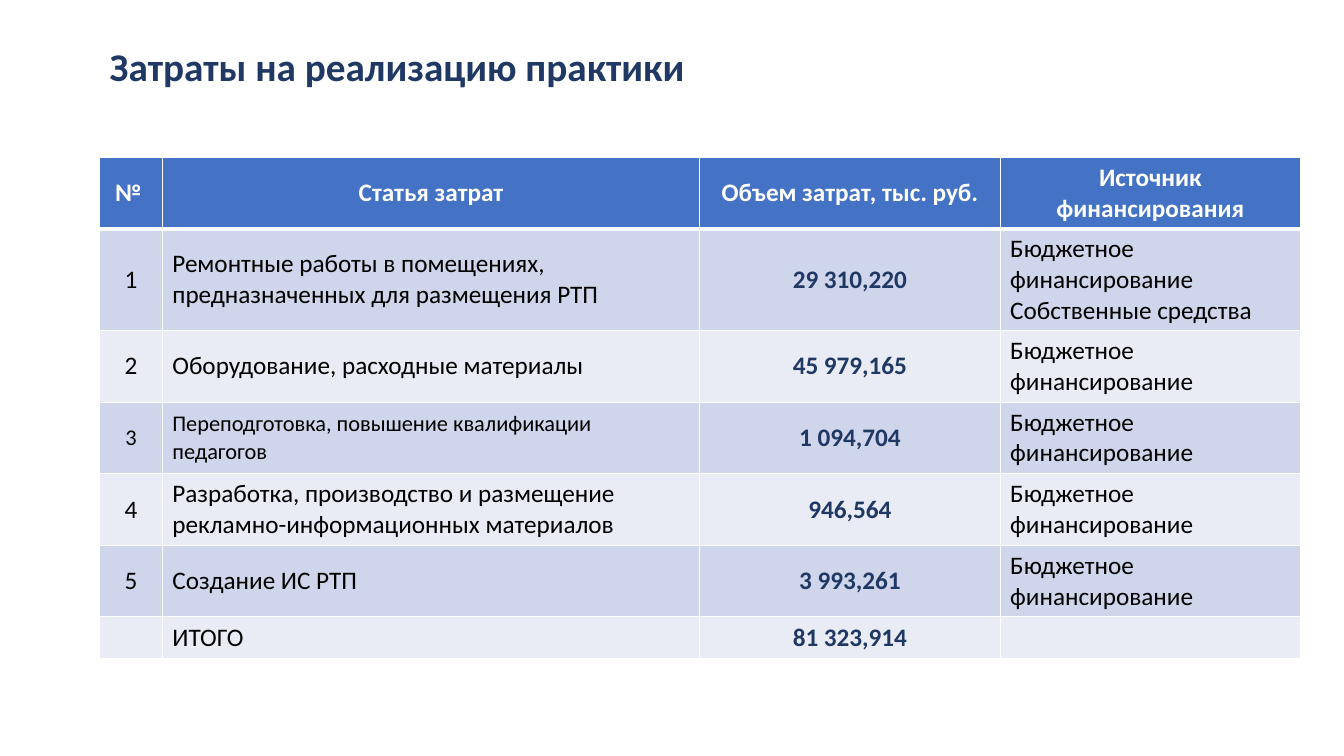
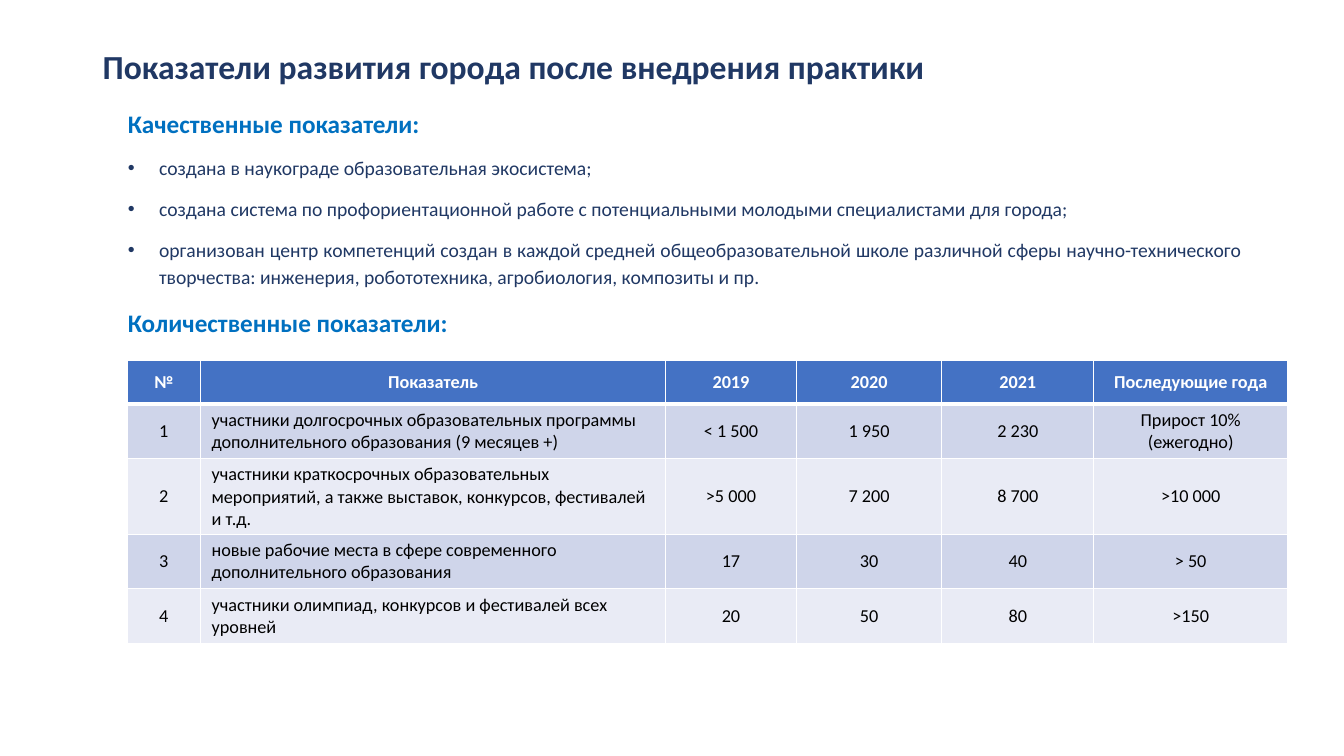
from dataclasses import dataclass

import pptx
import pptx.dml.color
import pptx.enum.text
import pptx.oxml
import pptx.oxml.ns
import pptx.util

PX = 9144  # EMU in one px, 100 px to the inch
FONT = "Calibri"
NAVY, BLUE, BLACK, WHITE = "203864", "0070C0", "000000", "FFFFFF"
HEAD, BANDS = "4472C4", ("CFD5EA", "E9EBF5")
ALIGN = pptx.enum.text.PP_ALIGN
MIDDLE = pptx.enum.text.MSO_ANCHOR.MIDDLE
Pt = pptx.util.Pt


@dataclass
class Column:
    head: str
    width: int
    align: ALIGN = ALIGN.CENTER
    color: str = BLACK
    bold: bool = False


@dataclass
class Row:
    height: int
    cells: tuple[str, ...]
    size: int = 0  # size of plain text, 0 for that of the table


@dataclass
class Grid:
    left: int
    top: int
    size: int
    inset: int
    head: int
    cols: list[Column]
    rows: list[Row]


@dataclass
class Para:
    text: str
    size: int = 14
    color: str = NAVY
    bold: bool = False
    bullet: bool = True


def px(n: int) -> pptx.util.Emu:
    return pptx.util.Emu(n * PX)


def rgb(color: str) -> pptx.dml.color.RGBColor:
    return pptx.dml.color.RGBColor.from_string(color)


def style(para, size: int, color: str, bold: bool, align: ALIGN) -> None:
    para.alignment = align
    font = para.font
    font.name, font.size, font.bold = FONT, Pt(size), bold
    font.color.rgb = rgb(color)


def add_box(slide, left: int, top: int, width: int, height: int):
    frame = slide.shapes.add_textbox(px(left), px(top), px(width), px(height)).text_frame
    frame.word_wrap = True
    return frame


def add_title(slide, text: str, left: int, size: int) -> None:
    frame = add_box(slide, left, 28, 1150, 81)
    frame.vertical_anchor = MIDDLE
    para = frame.paragraphs[0]
    para.text, para.line_spacing = text, 0.9
    style(para, size, NAVY, True, ALIGN.LEFT)


def add_body(slide, items: list[Para]) -> None:
    frame = add_box(slide, 92, 98, 1150, 578)
    for i, item in enumerate(items):
        para = frame.add_paragraph() if i else frame.paragraphs[0]
        para.text, para.line_spacing = item.text, 1.15
        para.space_before = Pt(10 if i else 0)
        props = para._p.get_or_add_pPr()
        props.set("marL", str(px(56 if item.bullet else 25)))
        props.set("indent", str(px(-31 if item.bullet else 0)))
        if item.bullet:
            ns = pptx.oxml.ns.nsdecls("a")
            props.append(pptx.oxml.parse_xml(f'<a:buFont {ns} typeface="Arial"/>'))
            props.append(pptx.oxml.parse_xml(f'<a:buChar {ns} char="•"/>'))
        style(para, item.size, item.color, item.bold, ALIGN.JUSTIFY)


def set_edges(cell, top: int, bottom: int) -> None:
    props = cell._tc.get_or_add_tcPr()
    ns = pptx.oxml.ns.nsdecls("a")
    for side, width in (("L", 1), ("R", 1), ("T", top), ("B", bottom)):
        props.append(pptx.oxml.parse_xml(
            f'<a:ln{side} {ns} w="{Pt(width)}"><a:solidFill>'
            f'<a:srgbClr val="{WHITE}"/></a:solidFill></a:ln{side}>'))


def fill_cell(cell, text: str, fill: str, inset: int) -> None:
    cell.text = text
    cell.vertical_anchor = MIDDLE
    cell.margin_left = cell.margin_right = px(inset)
    cell.margin_top = cell.margin_bottom = px(5)
    cell.fill.solid()
    cell.fill.fore_color.rgb = rgb(fill)


def add_grid(slide, grid: Grid) -> None:
    rows = [Row(grid.head, tuple(col.head for col in grid.cols)), *grid.rows]
    width = sum(col.width for col in grid.cols)
    height = sum(row.height for row in rows)
    table = slide.shapes.add_table(
        len(rows), len(grid.cols), px(grid.left), px(grid.top), px(width), px(height)).table
    for c, col in enumerate(grid.cols):
        table.columns[c].width = px(col.width)
    for r, row in enumerate(rows):
        table.rows[r].height = px(row.height)
        fill = BANDS[(r - 1) % 2] if r else HEAD
        for c, col in enumerate(grid.cols):
            cell = table.cell(r, c)
            set_edges(cell, 3 if r == 1 else 1, 1 if r else 3)
            fill_cell(cell, row.cells[c], fill, grid.inset)
            for para in cell.text_frame.paragraphs:
                if r == 0:
                    style(para, grid.size, WHITE, True, ALIGN.CENTER)
                else:
                    plain = col.color == BLACK and c < 2
                    size = row.size if row.size and plain else grid.size
                    style(para, size, col.color, col.bold, col.align)


# Costs
BUDGET = "Бюджетное финансирование"
COSTS = Grid(
    99, 156, 18, 10, 71,
    [
        Column("№ ", 62),
        Column("Статья затрат", 533, ALIGN.LEFT),
        Column("Объем затрат, тыс. руб.", 298, color=NAVY, bold=True),
        Column("Источник финансирования", 298, ALIGN.LEFT),
    ],
    [
        Row(101, ("1", "Ремонтные работы в помещениях, предназначенных для размещения РТП",
                  "29 310,220", BUDGET + "\nСобственные средства")),
        Row(71, ("2", "Оборудование, расходные материалы", "45 979,165", BUDGET)),
        Row(71, ("3", "Переподготовка, повышение квалификации педагогов",
                 "1 094,704", BUDGET), 16),
        Row(71, ("4", "Разработка, производство и размещение рекламно-информационных материалов",
                 "946,564", BUDGET)),
        Row(71, ("5", "Создание ИС РТП", "3 993,261", BUDGET)),
        Row(41, ("", "ИТОГО", "81 323,914", "")),
    ],
)

# Indicators
GOALS = [
    Para("Качественные показатели:", 18, BLUE, True, False),
    Para("создана в наукограде образовательная экосистема;"),
    Para("создана система по профориентационной работе с потенциальными молодыми "
         "специалистами для города;"),
    Para("организован центр компетенций создан в каждой средней общеобразовательной школе "
         "различной сферы научно-технического творчества: инженерия, робототехника, "
         "агробиология, композиты и пр."),
    Para("Количественные показатели:", 18, BLUE, True, False),
]
GROWTH = Grid(
    126, 358, 13, 11, 43,
    [
        Column("№", 73),
        Column("Показатель", 461, ALIGN.LEFT),
        Column("2019", 130),
        Column("2020", 144),
        Column("2021", 151),
        Column("Последующие года", 192),
    ],
    [
        Row(54, ("1", "участники долгосрочных образовательных программы "
                 "дополнительного образования (9 месяцев +)",
                 "< 1 500", "1 950", "2 230", "Прирост 10% (ежегодно)")),
        Row(75, ("2", "участники краткосрочных образовательных мероприятий, "
                 "а также выставок, конкурсов, фестивалей и т.д.",
                 ">5 000", "7 200", "8 700", ">10 000")),
        Row(54, ("3", "новые рабочие места в сфере современного дополнительного образования",
                 "17", "30", "40", "> 50")),
        Row(54, ("4", "участники олимпиад, конкурсов и фестивалей всех уровней",
                 "20", "50", "80", ">150")),
    ],
)


def main() -> None:
    deck = pptx.Presentation()
    deck.slide_width, deck.slide_height = px(1333), px(750)
    blank = deck.slide_layouts[6]

    slide = deck.slides.add_slide(blank)
    add_title(slide, "Затраты на реализацию практики", 99, 28)
    add_grid(slide, COSTS)

    slide = deck.slides.add_slide(blank)
    add_title(slide, "Показатели развития города после внедрения практики", 92, 24)
    add_body(slide, GOALS)
    add_grid(slide, GROWTH)

    deck.save("out.pptx")


if __name__ == "__main__":
    main()
